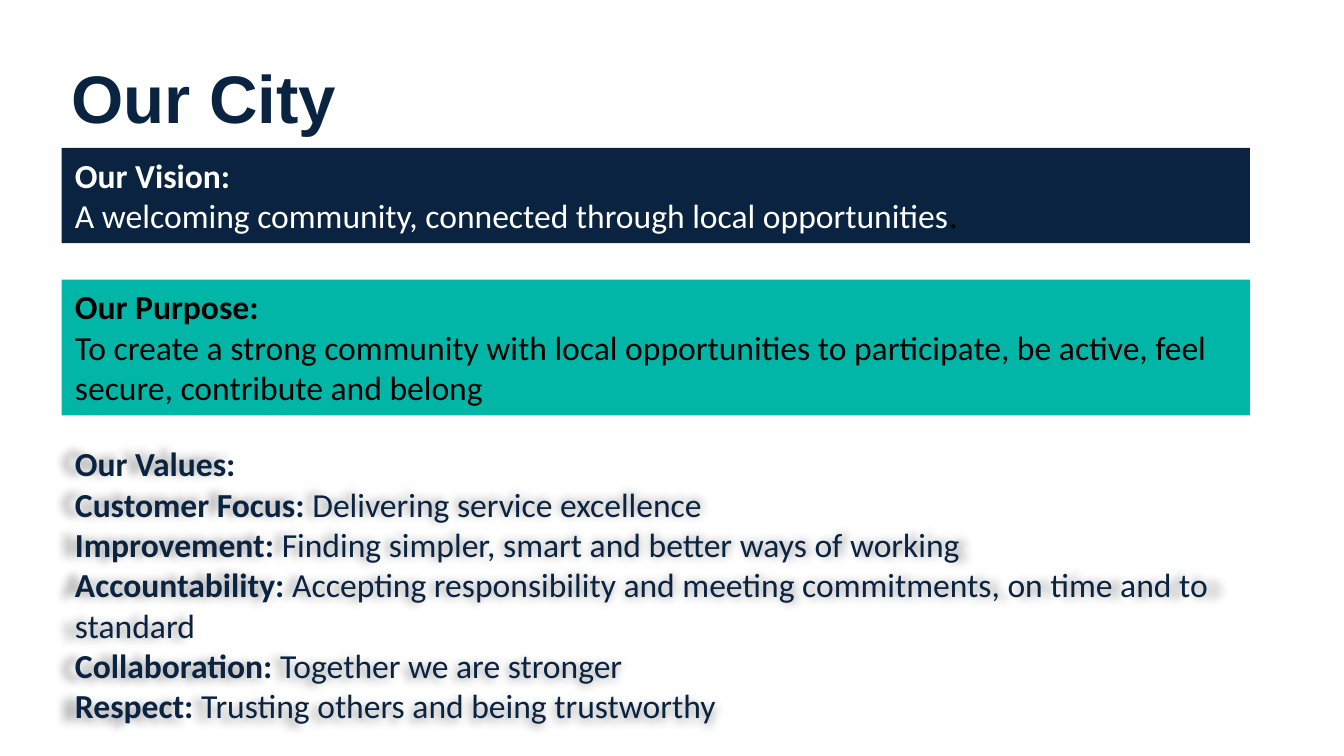
from dataclasses import dataclass

from lxml import etree
from pptx import Presentation
from pptx.dml.color import RGBColor
from pptx.enum.shapes import MSO_SHAPE
from pptx.enum.text import MSO_ANCHOR, MSO_AUTO_SIZE, PP_ALIGN
from pptx.oxml.ns import qn
from pptx.util import Pt

RECTANGLE = MSO_SHAPE.RECTANGLE
LEFT = PP_ALIGN.LEFT
TOP, BOTTOM = MSO_ANCHOR.TOP, MSO_ANCHOR.BOTTOM
GROW, FIXED = MSO_AUTO_SIZE.SHAPE_TO_FIT_TEXT, MSO_AUTO_SIZE.NONE
TITLE_ONLY = 5

BOX_LEFT, BOX_WIDTH = 33.1, 636.5


@dataclass(frozen=True)
class Theme:
    navy: RGBColor = RGBColor.from_string("092340")
    teal: RGBColor = RGBColor.from_string("01B6A7")
    white: RGBColor = RGBColor.from_string("FFFFFF")
    black: RGBColor = RGBColor.from_string("000000")
    title_font: str = "Arial"
    body_font: str = "Calibri"
    title_size: int = 36
    body_size: int = 18


class SlideBuilder:
    def __init__(self, page, theme):
        self.page = page
        self.theme = theme

    def title(self, text, left, top, width, height):
        box = self.page.shapes.title
        box.left, box.top, box.width, box.height = map(Pt, (left, top, width, height))
        frame = box.text_frame
        frame.text = text
        frame.auto_size = FIXED
        frame.vertical_anchor = BOTTOM
        para = frame.paragraphs[0]
        para.alignment = LEFT
        self.set_font(para.font, self.theme.title_font, self.theme.title_size, self.theme.navy)
        para.font.bold = True

    def panel(self, top, height, fill, color, lines):
        """Draw a filled box and return its paragraphs."""
        box = self.page.shapes.add_shape(RECTANGLE, *map(Pt, (BOX_LEFT, top, BOX_WIDTH, height)))
        box.shadow.inherit = False
        box.fill.solid()
        box.fill.fore_color.rgb = fill
        box.line.fill.background()
        return self.fill_text(box.text_frame, color, lines)

    def glowing_text(self, top, height, color, lines):
        """Add an unfilled text box whose text casts a soft, centred shadow."""
        box = self.page.shapes.add_textbox(*map(Pt, (BOX_LEFT, top, BOX_WIDTH, height)))
        effects = etree.SubElement(box.element.spPr, qn("a:effectLst"))
        shadow = etree.SubElement(effects, qn("a:outerShdw"), blurRad=str(Pt(5)),
                                  sx="102000", sy="102000", algn="ctr", rotWithShape="0")
        tint = etree.SubElement(shadow, qn("a:prstClr"), val="black")
        etree.SubElement(tint, qn("a:alpha"), val="40000")
        return self.fill_text(box.text_frame, color, lines)

    def fill_text(self, frame, color, lines):
        """Fill a frame from (bold label, plain text) pairs, one a paragraph."""
        frame.word_wrap = True
        frame.auto_size = GROW
        frame.vertical_anchor = TOP
        for index, parts in enumerate(lines):
            para = frame.add_paragraph() if index else frame.paragraphs[0]
            para.alignment = LEFT
            self.set_font(para.font, self.theme.body_font, self.theme.body_size, color)
            for text, bold in zip(parts, (True, False)):
                if text:
                    span = para.add_run()
                    span.text = text
                    span.font.bold = bold
        return frame.paragraphs

    @staticmethod
    def set_font(font, name, size, color):
        font.name = name
        font.size = Pt(size)
        font.color.rgb = color


def main():
    theme = Theme()
    deck = Presentation()
    deck.slide_width, deck.slide_height = Pt(720), Pt(405)
    page = deck.slides.add_slide(deck.slide_layouts[TITLE_ONLY])
    builder = SlideBuilder(page, theme)

    builder.title("Our City", 31, 25.9, 368, 51.1)

    vision = builder.panel(79.2, 51.1, theme.navy, theme.white, [
        ("Our Vision:", ""),
        ("", "A welcoming community, connected through local opportunities"),
    ])
    full_stop = vision[-1].add_run()
    full_stop.text = "."
    full_stop.font.color.rgb = theme.black

    builder.panel(149.8, 72.7, theme.teal, theme.black, [
        ("Our Purpose:", ""),
        ("", "To create a strong community with local opportunities to participate, "
             "be active, feel secure, contribute and belong"),
    ])

    builder.glowing_text(234, 159.8, theme.navy, [
        ("Our Values:", ""),
        ("Customer Focus: ", "Delivering service excellence"),
        ("Improvement: ", "Finding simpler, smart and better ways of working"),
        ("Accountability: ", "Accepting responsibility and meeting commitments, "
                             "on time and to standard"),
        ("Collaboration: ", "Together we are stronger"),
        ("Respect: ", "Trusting others and being trustworthy"),
    ])

    deck.save("out.pptx")


if __name__ == "__main__":
    main()
